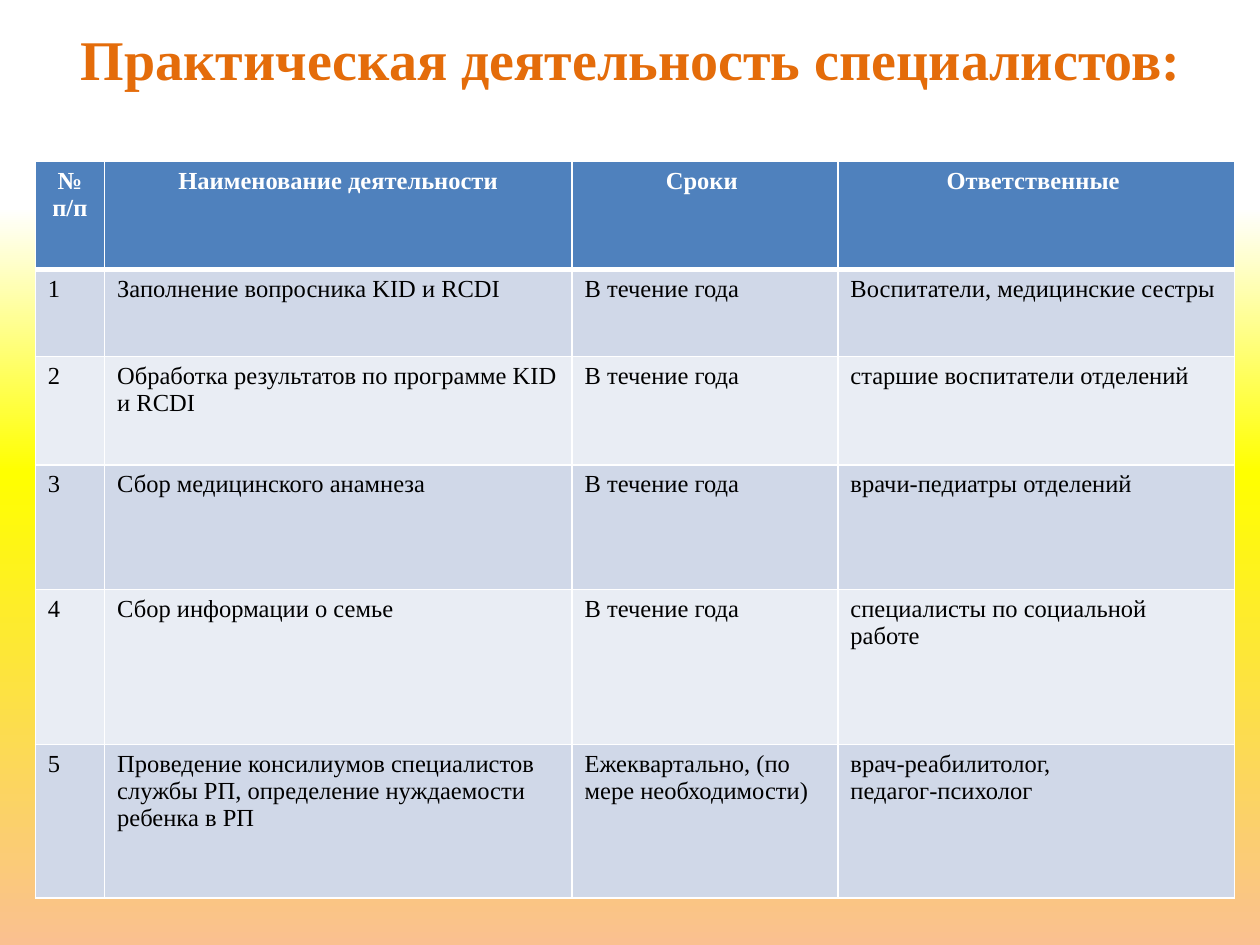
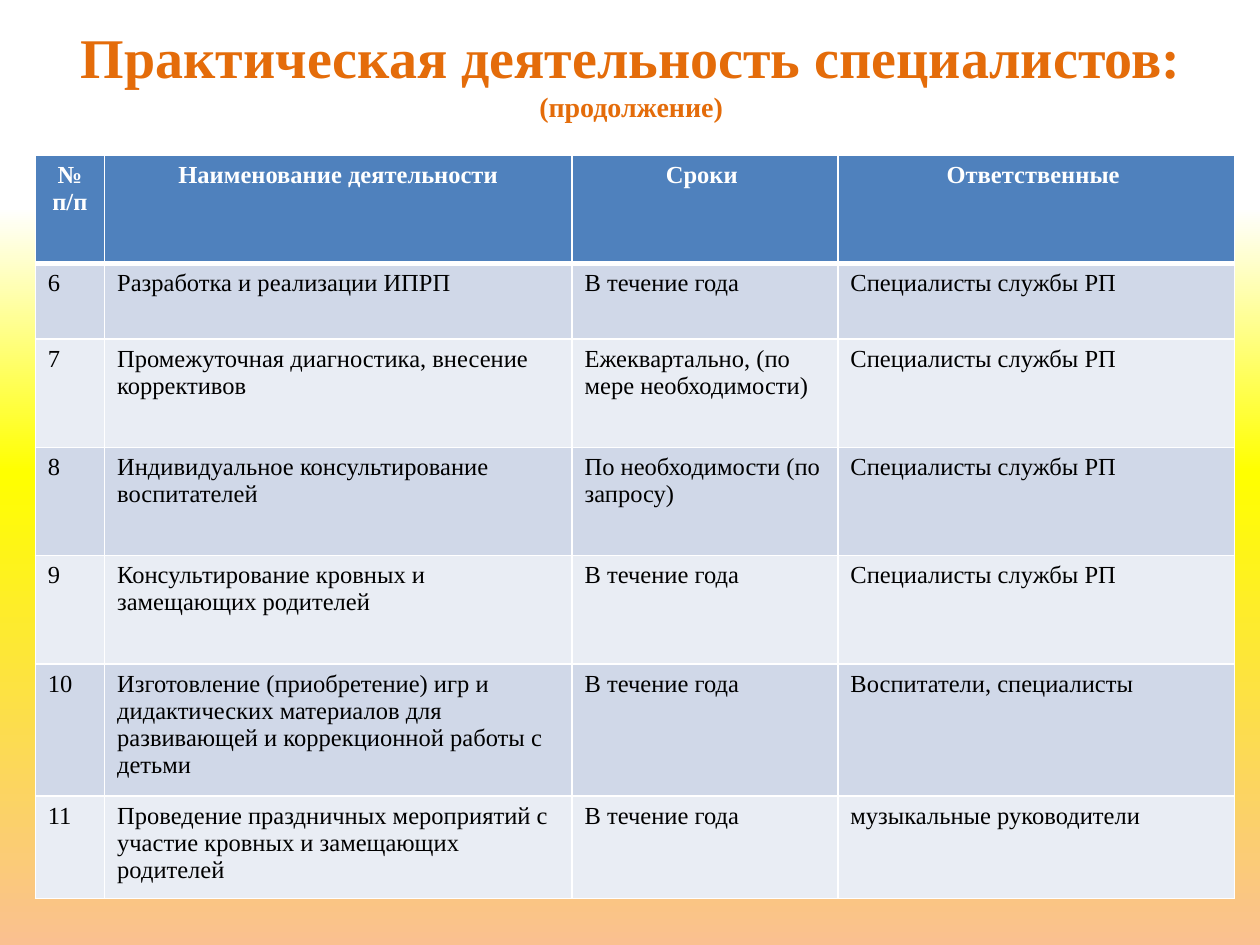
"""Build two slides that list the practical work of the specialists."""
from lxml import etree
from pptx import Presentation
from pptx.dml import color
from pptx.enum import text
from pptx.oxml import ns
from pptx.util import Inches, Pt

COLORS = {
    "title": "E46C0A",
    "header": "4F81BD",
    "odd": "D0D8E8",
    "even": "E9EDF4",
    "white": "FFFFFF",
    "black": "000000",
    "yellow": "FFFF00",
    "peach": "FAC090",
}
BACKGROUND_STOPS = [(22, "white", 50), (50, "yellow", 100), (100, "peach", 100)]
FONT = "Times New Roman"
TITLE = "Практическая деятельность специалистов:"
HEADINGS = ["№ п/п", "Наименование деятельности", "Сроки ", "Ответственные "]
COLUMN_WIDTHS = [0.55, 3.71, 2.11, 3.15]
ALL_YEAR = "В течение года"
QUARTERLY = "Ежеквартально, (по мере необходимости)"
SERVICE = "Специалисты службы РП"

ACTIVITIES = [
    ("Заполнение вопросника KID и RCDI", ALL_YEAR, "Воспитатели, медицинские сестры"),
    ("Обработка результатов по программе KID и RCDI", ALL_YEAR,
     "старшие воспитатели отделений"),
    ("Сбор медицинского анамнеза", ALL_YEAR, "врачи-педиатры отделений"),
    ("Сбор информации о семье", ALL_YEAR, "специалисты по социальной работе"),
    ("Проведение консилиумов специалистов службы РП, определение нуждаемости ребенка в РП",
     QUARTERLY, "врач-реабилитолог,\nпедагог-психолог"),
]
MORE_ACTIVITIES = [
    ("Разработка и реализации ИПРП", ALL_YEAR, SERVICE),
    ("Промежуточная диагностика, внесение коррективов", QUARTERLY, SERVICE),
    ("Индивидуальное консультирование воспитателей", "По необходимости (по запросу)", SERVICE),
    ("Консультирование кровных и замещающих родителей", ALL_YEAR, SERVICE),
    ("Изготовление (приобретение) игр и дидактических материалов для развивающей "
     "и коррекционной работы с детьми", ALL_YEAR, "Воспитатели, специалисты"),
    ("Проведение праздничных мероприятий с участие кровных и замещающих родителей",
     ALL_YEAR, "музыкальные руководители"),
]


class PlanDeck:
    """Hold the shared style and the current slide."""

    def __init__(self):
        self.deck = Presentation()
        self.deck.slide_width, self.deck.slide_height = Inches(10), Inches(7.5)
        self.page = None

    def add_page(self):
        self.page = self.deck.slides.add_slide(self.deck.slide_layouts[6])
        fill = self.page.background.fill
        fill.gradient()
        fill.gradient_angle = 270
        stops = self.page.element.find(".//" + ns.qn("a:gsLst"))
        for stop in list(stops):
            stops.remove(stop)
        for position, name, opacity in BACKGROUND_STOPS:
            stop = etree.SubElement(stops, ns.qn("a:gs"), pos=str(position * 1000))
            tint = etree.SubElement(stop, ns.qn("a:srgbClr"), val=COLORS[name])
            if opacity < 100:
                etree.SubElement(tint, ns.qn("a:alpha"), val=str(opacity * 1000))

    def add_span(self, para, words, size, name, bold):
        span = para.add_run()
        span.text = words
        span.font.name, span.font.size, span.font.bold = FONT, Pt(size), bold
        span.font.color.rgb = color.RGBColor.from_string(COLORS[name])

    def add_title(self, height, subtitle=None):
        box = self.page.shapes.add_textbox(Inches(0.51), 0, Inches(9), Inches(height))
        frame = box.text_frame
        frame.word_wrap = True
        frame.vertical_anchor = text.MSO_ANCHOR.MIDDLE
        para = frame.paragraphs[0]
        para.alignment = text.PP_ALIGN.CENTER
        self.add_span(para, TITLE, 32, "title", True)
        if subtitle:
            para.add_line_break()
            self.add_span(para, subtitle, 16, "title", True)

    def add_borders(self, cell, top, bottom):
        properties = cell._tc.get_or_add_tcPr()
        widths = {"lnL": 1, "lnR": 1, "lnT": top, "lnB": bottom}
        for index, (side, width) in enumerate(widths.items()):
            line = etree.Element(ns.qn("a:" + side), w=str(Pt(width)))
            fill = etree.SubElement(line, ns.qn("a:solidFill"))
            etree.SubElement(fill, ns.qn("a:srgbClr"), val=COLORS["white"])
            properties.insert(index, line)

    def fill_cell(self, cell, words, row):
        is_header = row == 0
        fill_name = "header" if is_header else "odd" if row % 2 else "even"
        cell.fill.solid()
        cell.fill.fore_color.rgb = color.RGBColor.from_string(COLORS[fill_name])
        self.add_borders(cell, 3 if row == 1 else 1, 3 if is_header else 1)
        frame = cell.text_frame
        for index, line in enumerate(words.split("\n")):
            para = frame.add_paragraph() if index else frame.paragraphs[0]
            if is_header:
                para.alignment = text.PP_ALIGN.CENTER
            self.add_span(para, line, 14, "white" if is_header else "black", is_header)

    def add_plan(self, top, row_heights, activities, first_number):
        rows = [HEADINGS]
        rows += [(str(number), *activity)
                 for number, activity in enumerate(activities, first_number)]
        table = self.page.shapes.add_table(
            len(rows), len(HEADINGS), Inches(0.28), Inches(top),
            Inches(sum(COLUMN_WIDTHS)), Inches(sum(row_heights))).table
        for column, width in zip(table.columns, COLUMN_WIDTHS):
            column.width = Inches(width)
        for row, (height, entries) in enumerate(zip(row_heights, rows)):
            table.rows[row].height = Inches(height)
            for column, words in enumerate(entries):
                self.fill_cell(table.cell(row, column), words, row)


def main():
    plan = PlanDeck()
    plan.add_page()
    plan.add_title(0.93)
    plan.add_plan(1.28, [0.86, 0.69, 0.86, 0.99, 1.23, 1.22], ACTIVITIES, 1)
    plan.add_page()
    plan.add_title(1.15, "(продолжение)")
    plan.add_plan(1.23, [0.86, 0.6, 0.86, 0.86, 0.86, 1.05, 0.81],
                  MORE_ACTIVITIES, len(ACTIVITIES) + 1)
    plan.deck.save("out.pptx")


if __name__ == "__main__":
    main()
